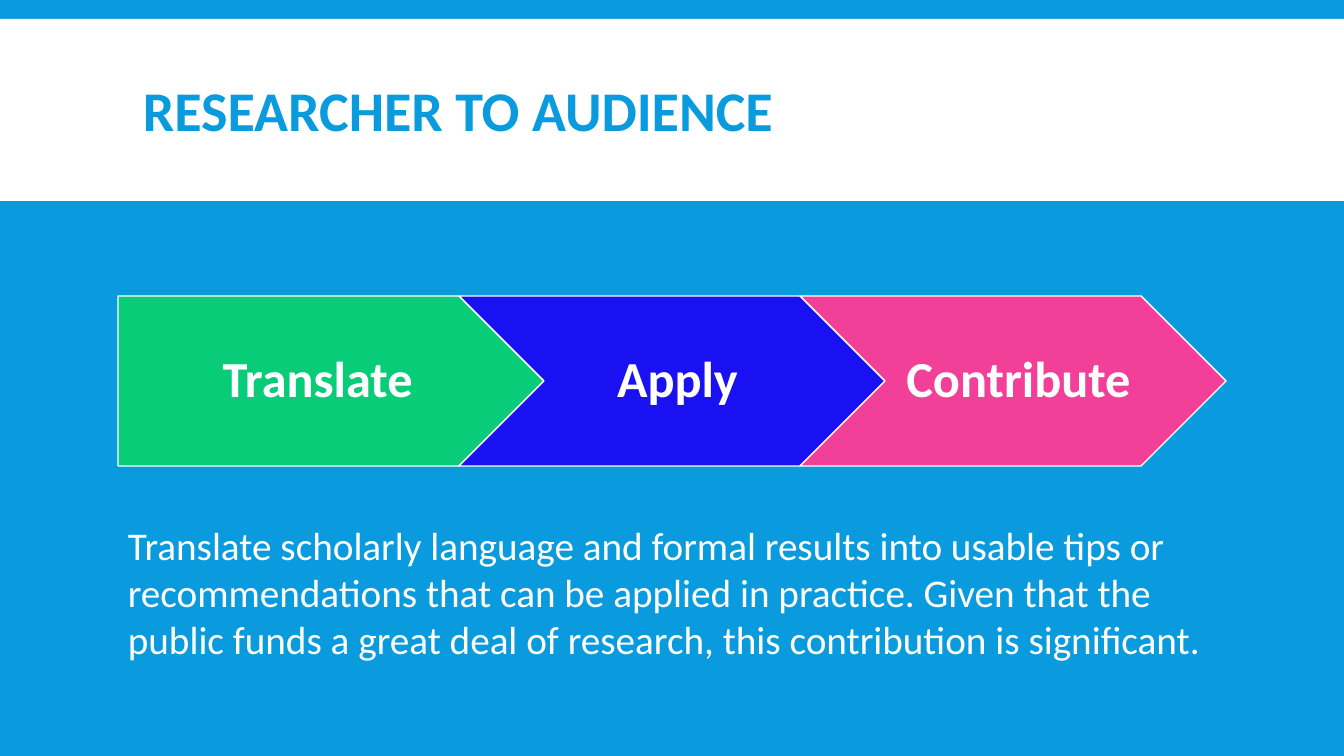
from dataclasses import dataclass

from pptx import Presentation
from pptx import util as u
from pptx.dml.color import RGBColor
from pptx.enum import shapes, text

EMU_PER_PX = 914400 / 100.8


@dataclass(frozen=True)
class Theme:
    font: str = "Calibri"
    blue: str = "099BDD"
    white: str = "FFFFFF"
    green: str = "08CC78"
    indigo: str = "1911F2"
    pink: str = "F24099"
    title_size: int = 40
    step_size: int = 36
    body_size: int = 28


@dataclass(frozen=True)
class Box:
    left: int
    top: int
    width: int
    height: int

    def emu(self) -> list[int]:
        return [px(v) for v in (self.left, self.top, self.width, self.height)]


@dataclass(frozen=True)
class Step:
    label: str
    color: str
    outline: shapes.MSO_SHAPE
    inset: int


THEME = Theme()
STEPS = [
    Step("Translate", THEME.green, shapes.MSO_SHAPE.PENTAGON, 21),
    Step("Apply", THEME.indigo, shapes.MSO_SHAPE.CHEVRON, 16),
    Step("Contribute", THEME.pink, shapes.MSO_SHAPE.CHEVRON, 16),
]
FIRST_STEP = Box(118, 296, 426, 170)
STEP_PITCH = 341


def px(value: int) -> int:
    return round(value * EMU_PER_PX)


def rgb(color: str) -> RGBColor:
    return RGBColor.from_string(color)


def write(frame, words: str, size: int, color: str, bold: bool = False,
          spacing: float = 1.0) -> None:
    frame.word_wrap = True
    frame.text = words
    paragraph = frame.paragraphs[0]
    paragraph.line_spacing = spacing
    font = paragraph.runs[0].font
    font.name, font.size, font.bold = THEME.font, u.Pt(size), bold
    font.color.rgb = rgb(color)


def add_filled(slide, outline: shapes.MSO_SHAPE, box: Box, color: str):
    shape = slide.shapes.add_shape(outline, *box.emu())
    shape.shadow.inherit = False
    shape.fill.solid()
    shape.fill.fore_color.rgb = rgb(color)
    shape.line.fill.background()
    return shape


def add_step(slide, step: Step, box: Box) -> None:
    arrow = add_filled(slide, step.outline, box, step.color)
    arrow.line.color.rgb = rgb(THEME.white)
    arrow.line.width = u.Pt(1)
    label = arrow.text_frame
    write(label, step.label, THEME.step_size, THEME.white, bold=True, spacing=0.9)
    label.vertical_anchor = text.MSO_ANCHOR.MIDDLE
    label.margin_left, label.margin_right = px(step.inset), px(5)
    label.paragraphs[0].alignment = text.PP_ALIGN.CENTER


def main() -> None:
    deck = Presentation()
    deck.slide_width, deck.slide_height = px(1344), px(756)
    slide = deck.slides.add_slide(deck.slide_layouts[6])
    slide.background.fill.solid()
    slide.background.fill.fore_color.rgb = rgb(THEME.blue)

    # Title band
    add_filled(slide, shapes.MSO_SHAPE.RECTANGLE, Box(0, 19, 1344, 182), THEME.white)
    title = slide.shapes.add_textbox(*Box(133, 31, 1079, 166).emu()).text_frame
    write(title, "RESEARCHER TO AUDIENCE", THEME.title_size, THEME.blue,
          bold=True, spacing=0.85)
    title.vertical_anchor = text.MSO_ANCHOR.MIDDLE

    # Process arrows
    for i, step in enumerate(STEPS):
        add_step(slide, step, Box(FIRST_STEP.left + i * STEP_PITCH, FIRST_STEP.top,
                                  FIRST_STEP.width, FIRST_STEP.height))

    # Explanation
    explanation = slide.shapes.add_textbox(*Box(118, 516, 1109, 152).emu()).text_frame
    write(explanation,
          "Translate scholarly language and formal results into usable tips or "
          "recommendations that can be applied in practice. Given that the public "
          "funds a great deal of research, this contribution is significant.",
          THEME.body_size, THEME.white)

    deck.save("out.pptx")


if __name__ == "__main__":
    main()
